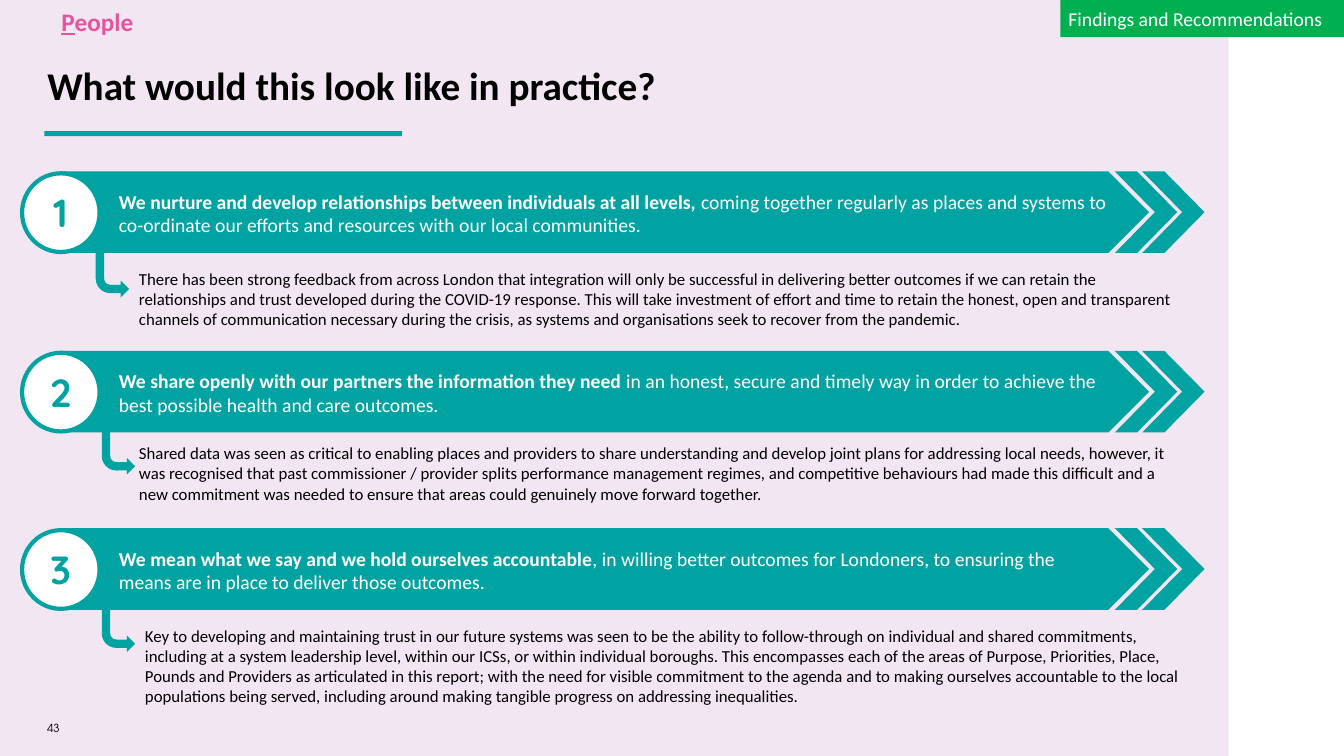
from pptx import Presentation
from pptx.dml.color import RGBColor
from pptx.enum.shapes import MSO_SHAPE
from pptx.enum.text import MSO_ANCHOR, MSO_AUTO_SIZE, PP_ALIGN
from pptx.oxml.ns import qn
from pptx.util import Pt

RECT, PLATE, OVAL = MSO_SHAPE.RECTANGLE, MSO_SHAPE.PENTAGON, MSO_SHAPE.OVAL
CHEVRON, BENT_ARROW = MSO_SHAPE.CHEVRON, MSO_SHAPE.BENT_ARROW
TOP, MIDDLE = MSO_ANCHOR.TOP, MSO_ANCHOR.MIDDLE
LEFT, CENTER = PP_ALIGN.LEFT, PP_ALIGN.CENTER
TEAL, WHITE, BLACK = "00A3A1", "FFFFFF", "000000"

prs = Presentation()
prs.slide_width, prs.slide_height = Pt(960), Pt(540)
slide = prs.slides.add_slide(prs.slide_layouts[5])


def add_block(kind, left, top, width, height, fill):
    block = slide.shapes.add_shape(kind, Pt(left), Pt(top), Pt(width), Pt(height))
    block.shadow.inherit = False
    block.fill.solid()
    block.fill.fore_color.rgb = RGBColor.from_string(fill)
    block.line.fill.background()
    return block


def write(holder, parts, size, color, bolds=(False,), font="Calibri", anchor=TOP, align=LEFT):
    """Fill a shape with one paragraph; each part is a run with its own bold flag."""
    frame = holder.text_frame
    frame.word_wrap = True
    frame.auto_size = MSO_AUTO_SIZE.NONE
    frame.vertical_anchor = anchor
    paragraph = frame.paragraphs[0]
    paragraph.alignment = align
    for part, bold in zip(parts, bolds):
        run = paragraph.add_run()
        run.text = part
        run.font.name, run.font.size, run.font.bold = font, Pt(size), bold
        run.font.color.rgb = RGBColor.from_string(color)
    return paragraph


# Background, title and page number
add_block(RECT, 0, 0, 877.7, 540, "F2E6F2")
add_block(RECT, 31.7, 93.6, 255.6, 3.6, TEAL)

title = slide.shapes.title
slide.shapes.element.append(title.element)  # bring in front of the background
title.left, title.top, title.width, title.height = Pt(26.6), Pt(33.8), Pt(833), Pt(58.3)
heading = write(title, ["What would this look like in practice?"], 28, BLACK, [True], anchor=MIDDLE)
heading.line_spacing = 0.9

page_number = slide.shapes.add_textbox(Pt(26.6), Pt(513.4), Pt(36.7), Pt(13.7))
write(page_number, ["43"], 8, BLACK, font="TeX Gyre Adventor", anchor=MIDDLE)

# Band top, arrow left, then detail left, top and height; then the wording
commitments = [
    (122.4, 68.4, (92.2, 187.9, 51.1),
     "We nurture and develop relationships between individuals at all levels, ",
     "coming together regularly as places and systems to co-ordinate our efforts and resources "
     "with our local communities.",
     "There has been strong feedback from across London that integration will only be successful "
     "in delivering better outcomes if we can retain the relationships and trust developed during "
     "the COVID-19 response. This will take investment of effort and time to retain the honest, "
     "open and transparent channels of communication necessary during the crisis, as systems and "
     "organisations seek to recover from the pandemic."),
    (250.6, 72.7, (92.2, 312.5, 51.1),
     "We share openly with our partners the information they need ",
     "in an honest, secure and timely way in order to achieve the best possible health and care "
     "outcomes.",
     "Shared data was seen as critical to enabling places and providers to share understanding "
     "and develop joint plans for addressing local needs, however, it was recognised that past "
     "commissioner / provider splits performance management regimes, and competitive behaviours "
     "had made this difficult and a new commitment was needed to ensure that areas could "
     "genuinely move forward together."),
    (377.3, 72.7, (96.5, 442.8, 65.5),
     "We mean what we say and we hold ourselves accountable",
     ", in willing better outcomes for Londoners, to ensuring the means are in place to deliver "
     "those outcomes.",
     "Key to developing and maintaining trust in our future systems was seen to be the ability to "
     "follow-through on individual and shared commitments, including at a system leadership "
     "level, within our ICSs, or within individual boroughs. This encompasses each of the areas "
     "of Purpose, Priorities, Place, Pounds and Providers as articulated in this report; with the "
     "need for visible commitment to the agenda and to making ourselves accountable to the local "
     "populations being served, including around making tangible progress on addressing "
     "inequalities."),
]

ARROW_TOP, ARROW_STEP = 178.6, 126.7
for index, (top, arrow_left, detail_place, lead, rest, detail) in enumerate(commitments):
    add_block(PLATE, 42.5, top, 778.3, 58.3, TEAL)
    promise = slide.shapes.add_textbox(Pt(77.8), Pt(top + 9.5), Pt(724), Pt(41))
    write(promise, [lead, rest], 14, WHITE, [True, False])

    badge = add_block(OVAL, 15.8, top + 1.4, 55.4, 56.2, WHITE)
    badge.line.color.rgb = RGBColor.from_string(TEAL)
    badge.line.width = Pt(3)
    number = slide.shapes.add_textbox(Pt(23.8), Pt(top + 8.6), Pt(38.9), Pt(41))
    write(number, [str(index + 1)], 28, TEAL, [True], font="Quicksand", align=CENTER)

    for chevron_left in (796.3, 815.8):
        chevron = add_block(CHEVRON, chevron_left, top, 44.6, 58.3, TEAL)
        chevron.adjustments[0] = 0.643

    arrow = add_block(BENT_ARROW, arrow_left, ARROW_TOP + index * ARROW_STEP, 23.8, 33.8, TEAL)
    arrow.element.spPr.find(qn("a:xfrm")).set("flipV", "1")

    detail_left, detail_top, detail_height = detail_place
    explanation = slide.shapes.add_textbox(
        Pt(detail_left), Pt(detail_top), Pt(758.2), Pt(detail_height))
    write(explanation, [detail], 12, BLACK, anchor=MIDDLE)

# Section labels
theme = slide.shapes.add_textbox(Pt(36.7), Pt(0.7), Pt(480), Pt(28.8))
theme_name = write(theme, ["P", "eople"], 18, "E6549D", [True, True])
theme_name.runs[0].font.underline = True

section = add_block(RECT, 757.4, 0, 202.6, 26.6, "00B050")
section.text_frame.margin_left = section.text_frame.margin_right = Pt(5.8)
write(section, ["Findings and Recommendations"], 14, WHITE, anchor=MIDDLE)

prs.save("out.pptx")
